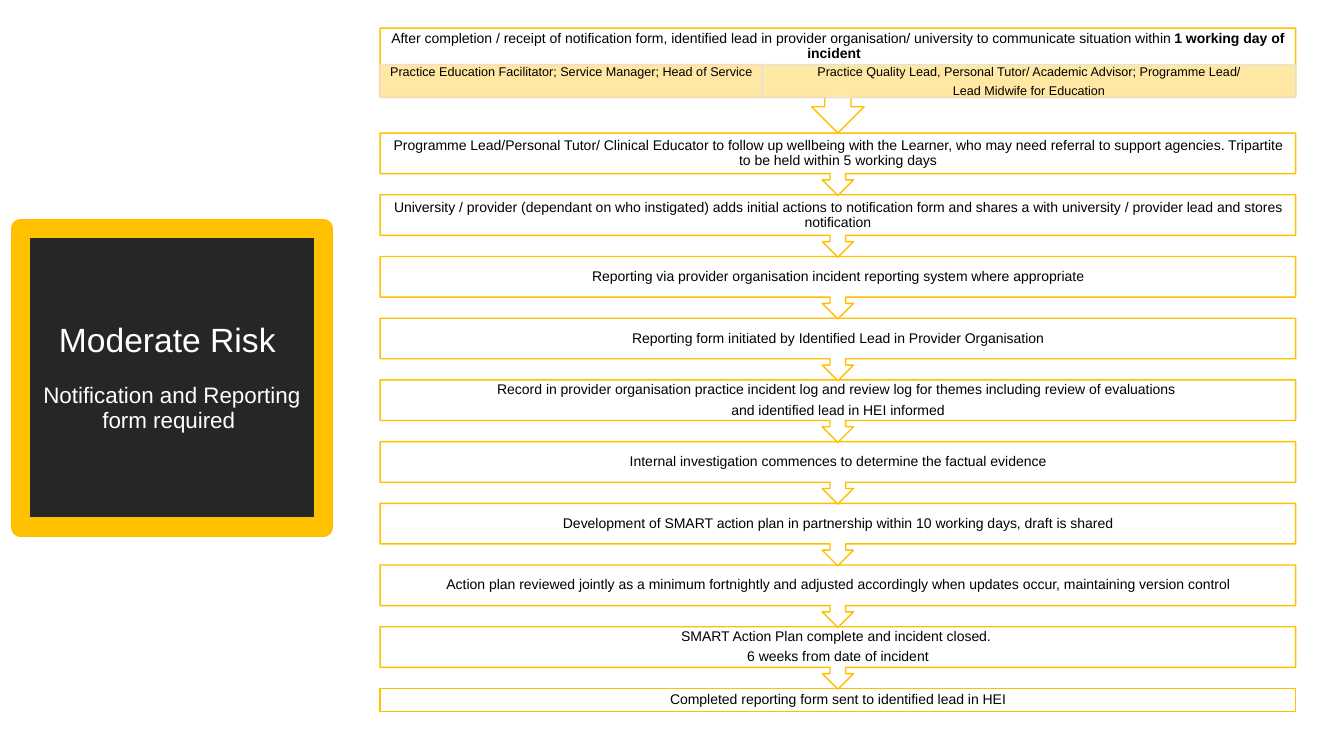
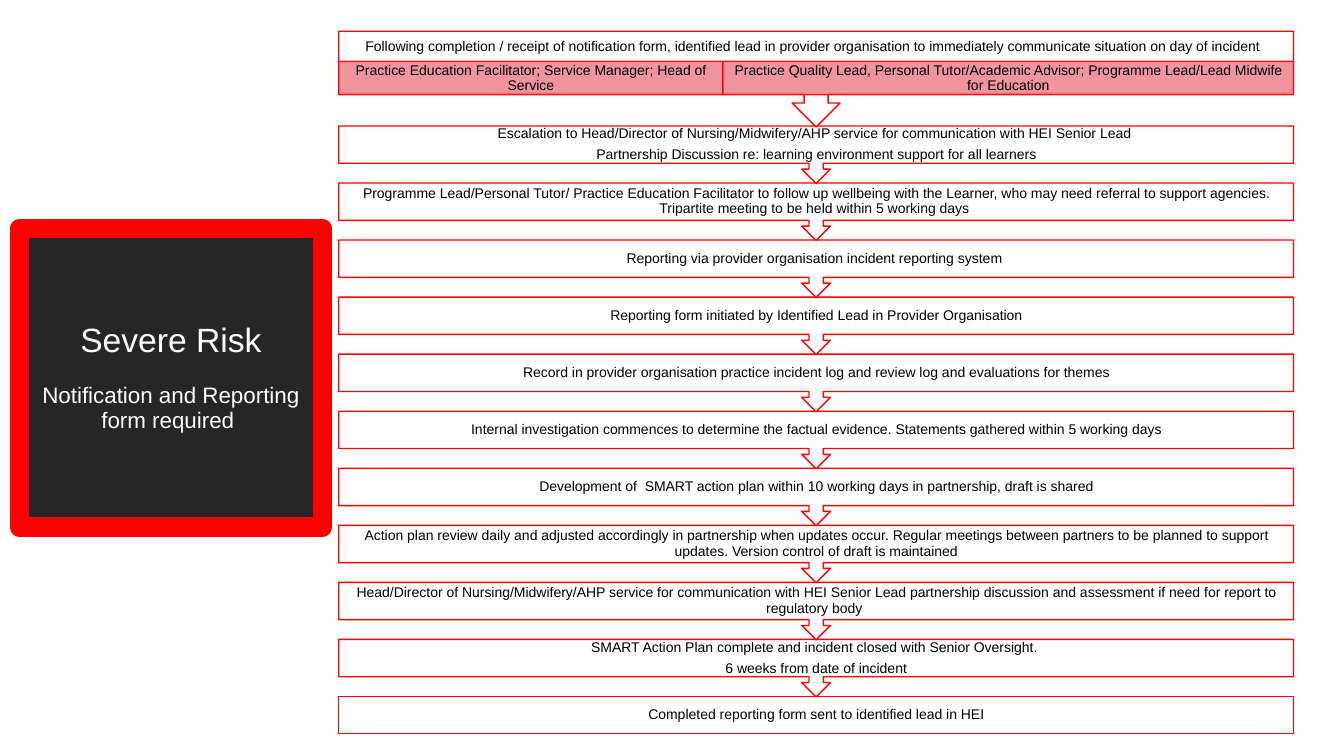
from dataclasses import dataclass

from lxml import etree
from pptx import Presentation
from pptx.dml.color import RGBColor
from pptx.enum.shapes import MSO_SHAPE as Shape
from pptx.enum.text import MSO_ANCHOR as Anchor, PP_ALIGN as Align
from pptx.oxml.ns import qn
from pptx.util import Inches, Pt


@dataclass(frozen=True)
class Theme:
    font: str = "Arial"
    ink: str = "000000"
    paper: str = "FFFFFF"
    badge: str = "262626"
    amber: str = "FFC000"
    amber_tint: str = "FFE699"
    amber_edges: tuple = ("F8D7CE", "E1E1E1")
    red: str = "FF0000"
    red_tint: str = "EF8995"
    title_size: float = 24
    subtitle_size: float = 16
    step_size: float = 10
    small_size: float = 9
    line_spacing: float = 0.9
    line_width: float = 1
    badge_border: float = 13.75
    tint_opacity: int = 90


THEME = Theme()
CALLOUT_BODY = 0.65  # share of a callout's height above its arrow


@dataclass(frozen=True)
class Flow:
    """Geometry and colours of one column of steps, in inches."""
    accent: str
    left: float
    width: float
    head_top: float
    head_height: float
    first_top: float
    last_top: float
    step_height: float
    last_height: float


@dataclass(frozen=True)
class Roles:
    """The two tinted cells under the heading, split at a given width."""
    texts: tuple
    top: float
    split: float
    tint: str
    edges: tuple
    size: float
    anchor: Anchor
    height: float = 0.33


class Deck:
    def __init__(self, theme):
        self.theme = theme
        self.prs = Presentation()
        self.prs.slide_width, self.prs.slide_height = Inches(13.33), Inches(7.5)
        self.slide = None

    def new_slide(self):
        self.slide = self.prs.slides.add_slide(self.prs.slide_layouts[6])

    def box(self, kind, at, fill, line, weight, opacity=100):
        shape = self.slide.shapes.add_shape(kind, *map(Inches, at))
        shape.shadow.inherit = False
        shape.fill.solid()
        shape.fill.fore_color.rgb = RGBColor.from_string(fill)
        shape.line.color.rgb = RGBColor.from_string(line)
        shape.line.width = Pt(weight)
        if opacity < 100:
            for color in shape._element.spPr.iter(qn("a:srgbClr")):
                etree.SubElement(color, qn("a:alpha"), val=str(opacity * 1000))
        return shape

    def label(self, shape, lines, sizes, color, gap, anchor=Anchor.MIDDLE,
              insets=(0.08, 0.01, 0.08, 0.01), bold_end=""):
        """Fill a shape with centred paragraphs, spaced by gap points."""
        frame = shape.text_frame
        frame.word_wrap = True
        frame.vertical_anchor = anchor
        (frame.margin_left, frame.margin_top,
         frame.margin_right, frame.margin_bottom) = map(Inches, insets)
        frame.text = "\n".join(lines)
        if bold_end:
            tail = frame.paragraphs[-1].add_run()
            tail.text = bold_end
            tail.font.bold = True
        for paragraph, size in zip(frame.paragraphs, sizes):
            paragraph.alignment = Align.CENTER
            paragraph.line_spacing = self.theme.line_spacing
            for run in paragraph.runs:
                run.font.name = self.theme.font
                run.font.size = Pt(size)
                run.font.color.rgb = RGBColor.from_string(color)
        for paragraph in frame.paragraphs[:-1]:
            paragraph.space_after = Pt(gap)

    def badge(self, left, risk, accent):
        t = self.theme
        badge = self.box(Shape.RECTANGLE, (left, 2.27, 3.01, 2.96),
                         t.badge, accent, t.badge_border)
        etree.SubElement(badge.line._get_or_add_ln(), qn("a:round"))
        self.label(badge, [risk, "Notification and Reporting form required "],
                   (t.title_size, t.subtitle_size), t.paper, gap=18,
                   insets=(0.1, 0.05, 0.1, 0.05))

    def step(self, kind, flow, top, height, text, **style):
        t = self.theme
        step = self.box(kind, (flow.left, top, flow.width, height),
                        t.paper, flow.accent, t.line_width)
        lines = text.split("\n")
        self.label(step, lines, [t.step_size] * len(lines), t.ink, gap=4, **style)

    def roles(self, flow, roles):
        t = self.theme
        lefts = (flow.left, flow.left + roles.split)
        widths = (roles.split, flow.width - roles.split)
        for left, width, text, edge in zip(lefts, widths, roles.texts, roles.edges):
            cell = self.box(Shape.RECTANGLE, (left, roles.top, width, roles.height),
                            roles.tint, edge, t.line_width, t.tint_opacity)
            lines = text.split("\n")
            self.label(cell, lines, [roles.size] * len(lines), t.ink,
                       gap=4, anchor=roles.anchor)

    def flow(self, flow, heading, deadline, roles, steps):
        """Draw the column from the bottom up, so each arrow lies over the next step."""
        *middle, last = steps
        pitch = (flow.last_top - flow.first_top) / len(middle)
        self.step(Shape.RECTANGLE, flow, flow.last_top, flow.last_height, last)
        for i, text in reversed(list(enumerate(middle))):
            self.step(Shape.DOWN_ARROW_CALLOUT, flow, flow.first_top + i * pitch,
                      flow.step_height, text)
        below_text = flow.head_top + flow.head_height * CALLOUT_BODY - roles.top
        self.step(Shape.DOWN_ARROW_CALLOUT, flow, flow.head_top, flow.head_height,
                  heading, bold_end=deadline, insets=(0.08, 0.01, 0.08, below_text))
        self.roles(flow, roles)


MODERATE_STEPS = [
    "Programme Lead/Personal Tutor/ Clinical Educator to follow up wellbeing with the Learner, "
    "who may need referral to support agencies. Tripartite to be held within 5 working days",
    "University / provider (dependant on who instigated) adds initial actions to notification "
    "form and shares a with university / provider lead and stores notification",
    "Reporting via provider organisation incident reporting system where appropriate",
    "Reporting form initiated by Identified Lead in Provider Organisation",
    "Record in provider organisation practice incident log and review log for themes "
    "including review of evaluations \nand identified lead in HEI informed",
    "Internal investigation commences to determine the factual evidence",
    "Development of SMART action plan in partnership within 10 working days, draft is shared",
    "Action plan reviewed jointly as a minimum fortnightly and adjusted accordingly when "
    "updates occur, maintaining version control",
    "SMART Action Plan complete and incident closed. \n6 weeks from date of incident",
    "Completed reporting form sent to identified lead in HEI",
]

SEVERE_STEPS = [
    "Escalation to Head/Director of Nursing/Midwifery/AHP service for communication with "
    "HEI Senior Lead \nPartnership Discussion re: learning environment support for all learners",
    "Programme Lead/Personal Tutor/ Practice Education Facilitator to follow up wellbeing with "
    "the Learner, who may need referral to support agencies. Tripartite meeting to be held "
    "within 5 working days ",
    "Reporting via provider organisation incident reporting system ",
    "Reporting form initiated by Identified Lead in Provider Organisation",
    "Record in provider organisation practice incident log and review log and evaluations "
    "for themes",
    "Internal investigation commences to determine the factual evidence. Statements gathered "
    "within 5 working days",
    "Development of  SMART action plan within 10 working days in partnership, draft is shared",
    "Action plan review daily and adjusted accordingly in partnership when updates occur. "
    "Regular meetings between partners to be planned to support updates. Version control of "
    "draft is maintained",
    "Head/Director of Nursing/Midwifery/AHP service for communication with HEI Senior Lead "
    "partnership discussion and assessment if need for report to regulatory body ",
    "SMART Action Plan complete and incident closed with Senior Oversight. \n"
    "6 weeks from date of incident",
    "Completed reporting form sent to identified lead in HEI",
]

PROVIDER_ROLES = "Practice Education Facilitator; Service Manager; Head of Service"


def moderate_risk(deck):
    t = deck.theme
    deck.new_slide()
    deck.badge(0.2, "Moderate Risk ", t.amber)
    deck.flow(
        Flow(t.amber, left=3.77, width=9.08, head_top=0.28, head_height=1.04,
             first_top=1.32, last_top=6.83, step_height=0.62, last_height=0.23),
        "After completion / receipt of notification form, identified lead in provider "
        "organisation/ university to communicate situation within ",
        "1 working day of incident  ",
        Roles((PROVIDER_ROLES,
               "Practice Quality Lead, Personal Tutor/ Academic Advisor; Programme Lead/\n"
               "Lead Midwife for Education"),
              top=0.64, split=3.79, tint=t.amber_tint, edges=t.amber_edges,
              size=t.small_size, anchor=Anchor.TOP),
        MODERATE_STEPS)


def severe_risk(deck):
    t = deck.theme
    deck.new_slide()
    deck.badge(0.19, "Severe Risk", t.red)
    deck.flow(
        Flow(t.red, left=3.36, width=9.47, head_top=0.31, head_height=0.95,
             first_top=1.25, last_top=6.91, step_height=0.57, last_height=0.37),
        "Following completion / receipt of notification form, identified lead in provider "
        "organisation to immediately communicate situation on day of incident  ",
        "",
        Roles((PROVIDER_ROLES,
               "Practice Quality Lead, Personal Tutor/Academic Advisor; "
               "Programme Lead/Lead Midwife for Education"),
              top=0.61, split=3.81, tint=t.red_tint, edges=(t.red, t.red),
              size=t.step_size, anchor=Anchor.MIDDLE),
        SEVERE_STEPS)


def main():
    deck = Deck(THEME)
    moderate_risk(deck)
    severe_risk(deck)
    deck.prs.save("out.pptx")


if __name__ == "__main__":
    main()
